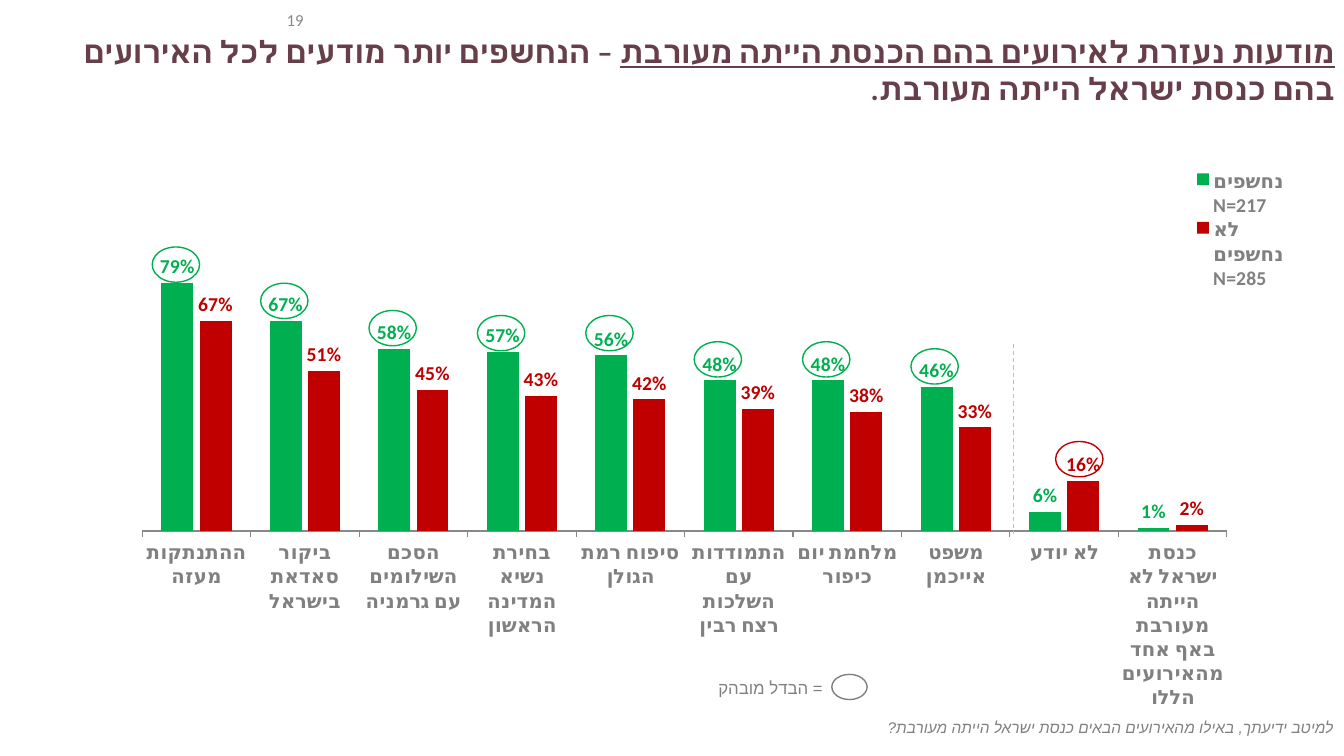
from lxml.etree import SubElement
from pptx import Presentation
from pptx.chart.data import CategoryChartData
from pptx.dml.color import RGBColor
from pptx.enum.chart import XL_CHART_TYPE, XL_LABEL_POSITION, XL_LEGEND_POSITION, XL_TICK_MARK
from pptx.enum.dml import MSO_LINE
from pptx.enum.shapes import MSO_CONNECTOR, MSO_SHAPE
from pptx.enum.text import MSO_ANCHOR, PP_ALIGN
from pptx.oxml import parse_xml
from pptx.oxml.ns import nsdecls, qn
from pptx.util import Inches, Pt

COLORS = {
    "exposed": "00B050",
    "unexposed": "C00000",
    "title": "673F4A",
    "text": "808080",
    "page": "898989",
    "axis": "888888",
    "divider": "BFBFBF",
}

EVENTS = [
    "ההתנתקות מעזה",
    "ביקור סאדאת בישראל",
    "הסכם השילומים עם גרמניה",
    "בחירת נשיא המדינה הראשון",
    "סיפוח רמת הגולן",
    "התמודדות עם השלכות רצח רבין",
    "מלחמת יום כיפור",
    "משפט אייכמן",
    "לא יודע",
    "כנסת ישראל לא הייתה מעורבת באף אחד מהאירועים הללו",
]

SERIES = [
    ("נחשפים\nN=217", "exposed", [0.79, 0.67, 0.58, 0.57, 0.56, 0.48, 0.48, 0.46, 0.06, 0.01]),
    ("לא נחשפים\nN=285", "unexposed", [0.67, 0.51, 0.45, 0.43, 0.42, 0.39, 0.38, 0.33, 0.16, 0.02]),
]

EXPOSED_RING_TOPS = [2.45, 2.81, 3.08, 3.13, 3.13, 3.39, 3.39, 3.46]


class SurveySlide:
    heading_font = "Calibri"
    note_font = "Arial"

    def __init__(self, presentation):
        self.slide = presentation.slides.add_slide(presentation.slide_layouts[5])

    def color(self, name):
        return RGBColor.from_string(COLORS[name])

    def style_font(self, font, size, color, bold=False, name=heading_font):
        font.size = Pt(size)
        font.bold = bold
        font.name = name
        font.color.rgb = self.color(color)

    def set_script_font(self, properties, name):
        SubElement(properties, qn("a:cs")).set("typeface", name)

    def fill_frame(self, frame, texts, size, color, name=heading_font,
                   bold=False, italic=False, anchor=MSO_ANCHOR.TOP):
        frame.word_wrap = True
        frame.vertical_anchor = anchor
        paragraph = frame.paragraphs[0]
        paragraph.alignment = PP_ALIGN.RIGHT
        paragraph._p.get_or_add_pPr().set("rtl", "1")
        for text, underline in texts:
            run = paragraph.add_run()
            run.text = text
            self.style_font(run.font, size, color, bold, name)
            run.font.italic = italic
            run.font.underline = underline
            self.set_script_font(run._r.get_or_add_rPr(), name)

    def title(self, left, top, width, height, texts):
        shape = self.slide.shapes.title
        shape.left, shape.top = Inches(left), Inches(top)
        shape.width, shape.height = Inches(width), Inches(height)
        self.fill_frame(shape.text_frame, texts, 22, "title", bold=True, anchor=MSO_ANCHOR.MIDDLE)

    def text(self, left, top, width, height, text, size, color, **style):
        shape = self.slide.shapes.add_textbox(
            Inches(left), Inches(top), Inches(width), Inches(height))
        self.fill_frame(shape.text_frame, [(text, False)], size, color, **style)

    def ring(self, left, top, color, width=0.47, height=0.35):
        shape = self.slide.shapes.add_shape(
            MSO_SHAPE.OVAL, Inches(left), Inches(top), Inches(width), Inches(height))
        shape.shadow.inherit = False
        shape.fill.background()
        shape.line.color.rgb = self.color(color)
        shape.line.width = Pt(1)

    def divider(self, left, top, bottom):
        connector = self.slide.shapes.add_connector(
            MSO_CONNECTOR.STRAIGHT, Inches(left), Inches(top), Inches(left), Inches(bottom))
        connector.line.color.rgb = self.color("divider")
        connector.line.width = Pt(0.75)
        connector.line.dash_style = MSO_LINE.DASH
        SubElement(connector._element.spPr, qn("a:effectLst"))

    def place(self, layout_parent, left, top, width, height, inner=False):
        target = '<c:layoutTarget val="inner"/>' if inner else ""
        modes = '<c:xMode val="edge"/><c:yMode val="edge"/>'
        sizes = "".join(f'<c:{key} val="{value}"/>' for key, value in
                        zip("xywh", (left, top, width, height)))
        for layout in layout_parent.findall(qn("c:layout")):
            layout_parent.remove(layout)
        layout = parse_xml(f'<c:layout {nsdecls("c")}><c:manualLayout>'
                           f'{target}{modes}{sizes}</c:manualLayout></c:layout>')
        layout_parent.insert(0 if inner else 1, layout)

    def chart(self, left, top, width, height):
        data = CategoryChartData(number_format="###0%")
        data.categories = EVENTS
        for name, _, values in SERIES:
            data.add_series(name, values)
        chart = self.slide.shapes.add_chart(
            XL_CHART_TYPE.COLUMN_CLUSTERED, Inches(left), Inches(top),
            Inches(width), Inches(height), data).chart
        chart.has_title = False
        chart.font.name = self.heading_font
        chart.font.size = Pt(18)

        value_axis = chart.value_axis
        value_axis.minimum_scale, value_axis.maximum_scale = 0, 1
        value_axis.has_major_gridlines = False
        value_axis.visible = False
        category_axis = chart.category_axis
        category_axis.major_tick_mark = XL_TICK_MARK.OUTSIDE
        category_axis.format.line.color.rgb = self.color("axis")
        category_axis.format.line.width = Pt(0.75)
        self.style_font(category_axis.tick_labels.font, 14, "text", bold=True)

        plot = chart.plots[0]
        plot.gap_width, plot.overlap = 120, -20
        plot.vary_by_categories = False
        for series, (_, color, _) in zip(plot.series, SERIES):
            series.format.fill.solid()
            series.format.fill.fore_color.rgb = self.color(color)
            labels = series.data_labels
            labels.show_value = True
            labels.position = XL_LABEL_POSITION.OUTSIDE_END
            labels.number_format = "###0%"
            labels.number_format_is_linked = False
            self.style_font(labels.font, 14, color, bold=True)

        chart.has_legend = True
        chart.legend.position = XL_LEGEND_POSITION.RIGHT
        chart.legend.include_in_layout = False
        self.style_font(chart.legend.font, 14, "text", bold=True)
        self.place(chart.legend._element, 0.9, 0.02, 0.09, 0.22)
        self.place(chart.element.chart.plotArea, 0.047, 0.107, 0.887, 0.568, inner=True)
        for properties in chart.element.iter(qn("a:defRPr")):
            self.set_script_font(properties, self.heading_font)


def main():
    presentation = Presentation()
    presentation.slide_width, presentation.slide_height = Inches(13.33), Inches(7.5)
    survey = SurveySlide(presentation)
    survey.chart(0.84, 1.57, 12.13, 5.48)
    survey.text(0, 0, 3.11, 0.4, "19", 12, "page", anchor=MSO_ANCHOR.MIDDLE)
    survey.text(4.75, 7.07, 8.58, 0.29,
                "למיטב ידיעתך, באילו מהאירועים הבאים כנסת ישראל הייתה מעורבת?",
                11, "text", name=survey.note_font, italic=True)
    survey.title(0.23, 0.2, 13.11, 0.99, [
        ("מודעות נעזרת לאירועים בהם הכנסת הייתה מעורבת", True),
        (" – הנחשפים יותר מודעים לכל האירועים בהם כנסת ישראל הייתה מעורבת.", False),
    ])
    survey.divider(10.05, 3.41, 5.3)
    for index, top in enumerate(EXPOSED_RING_TOPS):
        survey.ring(1.51 + 1.075 * index, top, "exposed")
    survey.ring(10.47, 4.38, "unexposed")
    survey.ring(8.25, 6.69, "text", 0.35, 0.25)
    survey.text(6.95, 6.67, 1.31, 0.3, "= הבדל מובהק", 12, "text", name=survey.note_font)
    presentation.save("out.pptx")


if __name__ == "__main__":
    main()
